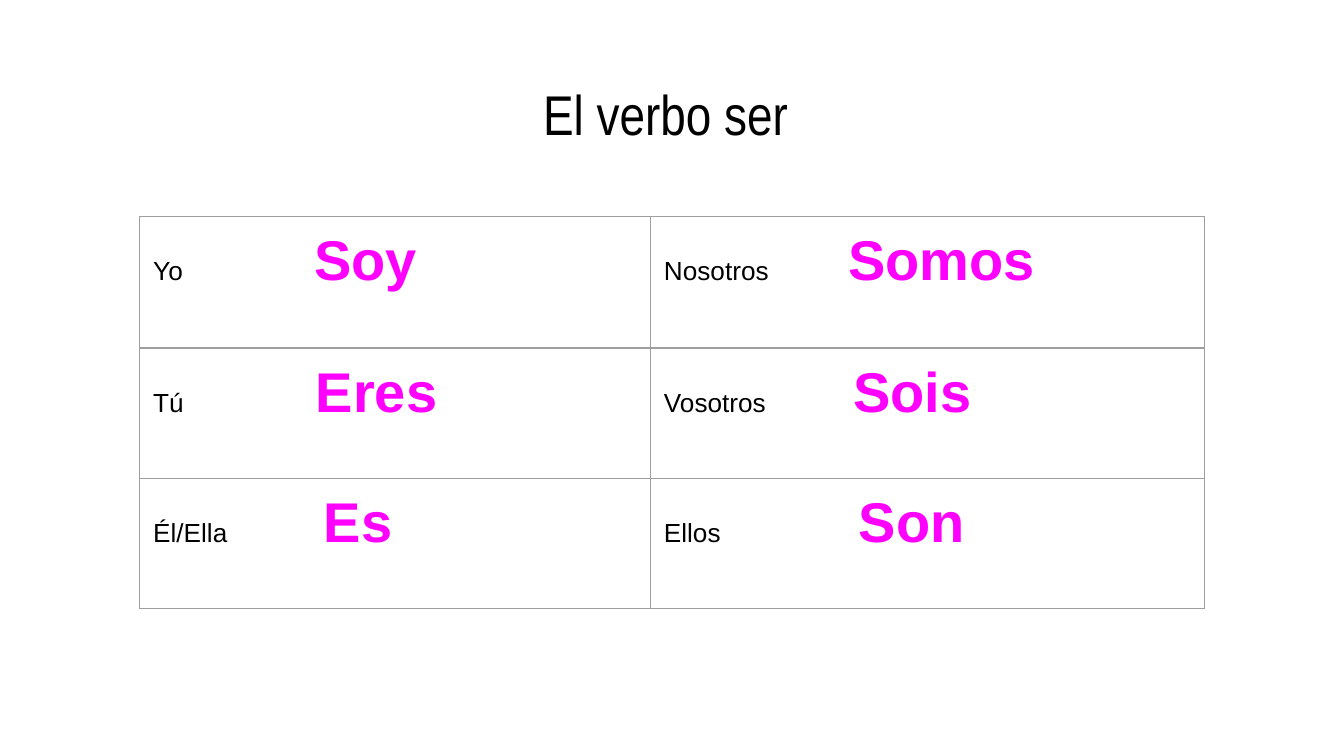
from lxml.etree import SubElement
from pptx import Presentation
from pptx.dml.color import RGBColor
from pptx.enum.text import MSO_ANCHOR, MSO_AUTO_SIZE, PP_ALIGN
from pptx.oxml.ns import qn
from pptx.util import Inches, Pt

BLACK = RGBColor(0x00, 0x00, 0x00)
PINK = RGBColor(0xFF, 0x00, 0xFF)
GRAY = RGBColor(0x9E, 0x9E, 0x9E)

WIDTH = Inches(10)
HEIGHT = WIDTH * 9 // 16
INSET = Inches(0.1)
COLS = (3.8, 4.12)
ROWS = (0.98, 0.97, 0.97)
VERBS = (
    (("Yo", "Soy", 1.2), ("Nosotros", "Somos", 1.37)),
    (("Tú", "Eres", 1.21), ("Vosotros", "Sois", 1.41)),
    (("Él/Ella", "Es", 1.27), ("Ellos", "Son", 1.45)),
)


class Deck:
    def __init__(self):
        self.show = Presentation()
        self.show.slide_width, self.show.slide_height = WIDTH, HEIGHT
        self.slide = self.show.slides.add_slide(self.show.slide_layouts[5])

    def style(self, run, size, color, bold=False, face="Arial"):
        font = run.font
        font.name, font.size, font.bold = face, Pt(size), bold
        font.color.rgb = color

    def title(self, text):
        shape = self.slide.shapes.title
        shape.left, shape.top = Inches(0.34), Inches(0.49)
        shape.width, shape.height = Inches(9.32), Inches(0.63)
        frame = shape.text_frame
        frame.text = text
        frame.auto_size = MSO_AUTO_SIZE.NONE
        frame.vertical_anchor = MSO_ANCHOR.TOP
        frame.margin_left = frame.margin_right = INSET
        frame.margin_top = frame.margin_bottom = INSET
        line = frame.paragraphs[0]
        line.alignment = PP_ALIGN.CENTER
        self.style(line.runs[0], 30, BLACK, face="Arial Narrow")

    def border(self, cell):
        props = cell._tc.get_or_add_tcPr()
        for place, side in enumerate(("lnL", "lnR", "lnT", "lnB")):
            edge = SubElement(props, qn(f"a:{side}"), w=str(Pt(0.75)))
            fill = SubElement(edge, qn("a:solidFill"))
            SubElement(fill, qn("a:srgbClr"), val=str(GRAY))
            props.insert(place, edge)

    def cell(self, cell, person, verb, stop):
        cell.margin_left = cell.margin_right = INSET
        cell.margin_top = cell.margin_bottom = INSET
        cell.fill.background()
        self.border(cell)
        line = cell.text_frame.paragraphs[0]
        line.text = f"{person}\t"
        line.add_run().text = verb
        self.style(line.runs[0], 14, BLACK)
        self.style(line.runs[1], 30, PINK, bold=True)
        tabs = SubElement(line._p.get_or_add_pPr(), qn("a:tabLst"))
        SubElement(tabs, qn("a:tab"), pos=str(Inches(stop)), algn="l")

    def table(self, left, top, data):
        frame = self.slide.shapes.add_table(
            len(ROWS), len(COLS), Inches(left), Inches(top),
            Inches(sum(COLS)), Inches(sum(ROWS)))
        table = frame.table
        table.first_row = table.horz_banding = False
        for col, width in zip(table.columns, COLS):
            col.width = Inches(width)
        for row, height, items in zip(table.rows, ROWS, data):
            row.height = Inches(height)
            for cell, item in zip(row.cells, items):
                self.cell(cell, *item)


def main():
    deck = Deck()
    deck.title("El verbo ser ")
    deck.table(1.04, 1.61, VERBS)
    deck.show.save("out.pptx")


if __name__ == "__main__":
    main()
